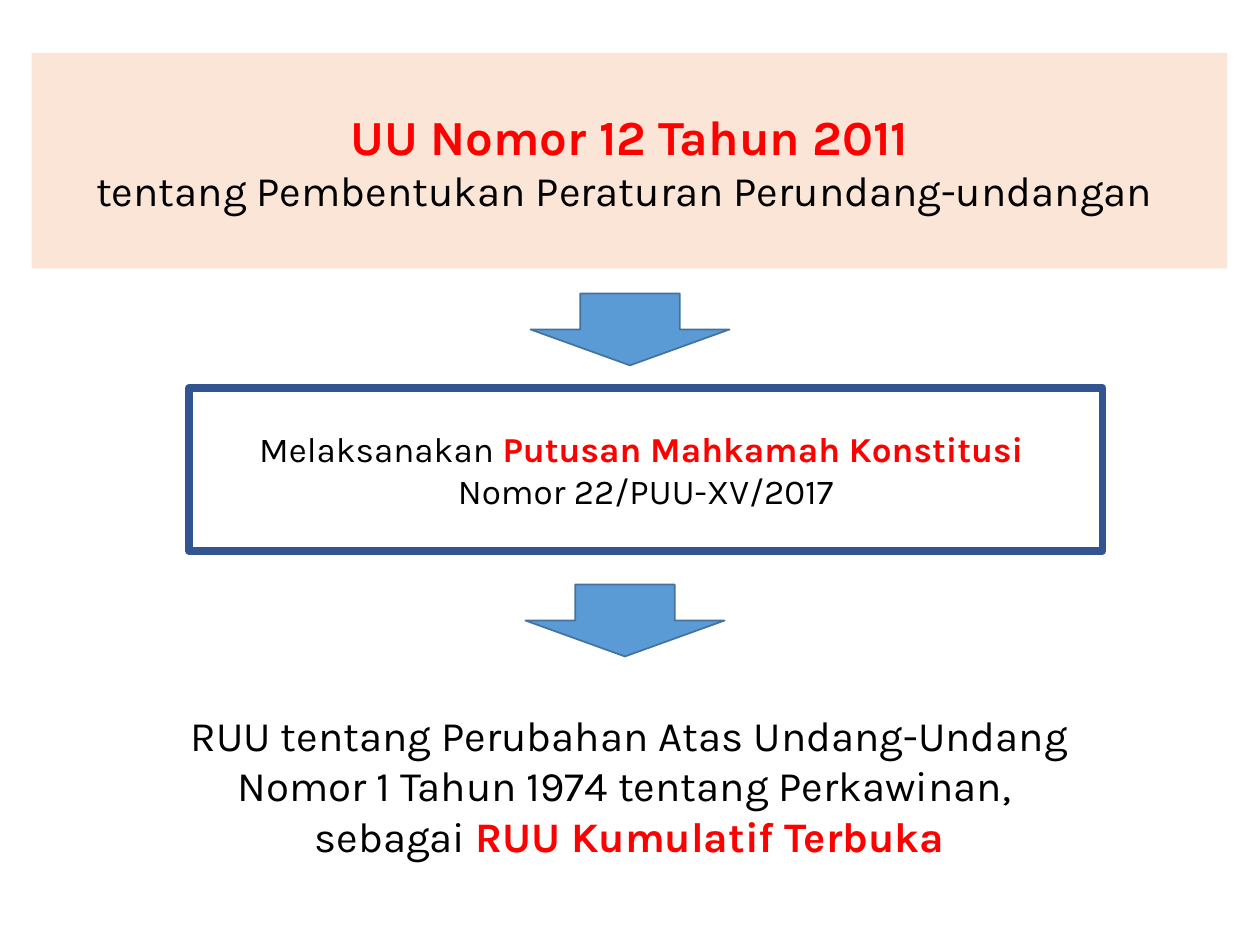
from dataclasses import dataclass

from pptx import Presentation
from pptx.dml.color import RGBColor
from pptx.enum.shapes import MSO_SHAPE
from pptx.enum.text import MSO_ANCHOR, PP_ALIGN
from pptx.util import Inches, Pt


@dataclass(frozen=True)
class Theme:
    font: str = "Karla"
    ink: str = "000000"
    accent: str = "FF0000"
    peach: str = "FBE5D6"
    white: str = "FFFFFF"
    navy: str = "325491"
    arrow: str = "5B9BD5"
    arrow_edge: str = "43739E"
    title_size: int = 28
    body_size: int = 24
    ruling_size: int = 20


THEME = Theme()


def plain(text, size):
    return text, {"size": Pt(size), "bold": False}, THEME.ink


def strong(text, size):
    return text, {"size": Pt(size), "bold": True}, THEME.accent


def write_lines(box, lines, anchor):
    frame = box.text_frame
    frame.word_wrap = True
    frame.vertical_anchor = anchor
    for index, line in enumerate(lines):
        para = frame.add_paragraph() if index else frame.paragraphs[0]
        para.alignment = PP_ALIGN.CENTER
        for text, formats, color in line:
            span = para.add_run()
            span.text = text
            for name, value in {"name": THEME.font, **formats}.items():
                setattr(span.font, name, value)
            span.font.color.rgb = RGBColor.from_string(color)


def add_block(page, kind, place, fill, edge=None, edge_width=1):
    block = page.shapes.add_shape(kind, *map(Inches, place))
    block.shadow.inherit = False
    block.fill.solid()
    block.fill.fore_color.rgb = RGBColor.from_string(fill)
    if edge:
        block.line.color.rgb = RGBColor.from_string(edge)
        block.line.width = Pt(edge_width)
    else:
        block.line.fill.background()
    return block


def add_panel(page, place, lines, fill, edge=None, edge_width=1):
    panel = add_block(page, MSO_SHAPE.RECTANGLE, place, fill, edge, edge_width)
    write_lines(panel, lines, MSO_ANCHOR.MIDDLE)


def add_down_arrow(page, left, top):
    add_block(page, MSO_SHAPE.DOWN_ARROW, (left, top, 1.58, 0.57),
              THEME.arrow, THEME.arrow_edge)


def add_text(page, place, lines):
    box = page.shapes.add_textbox(*map(Inches, place))
    write_lines(box, lines, MSO_ANCHOR.TOP)


def main():
    deck = Presentation()
    deck.slide_width, deck.slide_height = Inches(10), Inches(7.5)
    page = deck.slides.add_slide(deck.slide_layouts[6])

    add_panel(page, (0.25, 0.42, 9.49, 1.71), [
        [strong("UU Nomor 12 Tahun 2011", THEME.title_size)],
        [plain("tentang Pembentukan Peraturan Perundang-undangan ",
               THEME.body_size)],
    ], THEME.peach)
    add_panel(page, (1.5, 3.08, 7.25, 1.29), [
        [plain("Melaksanakan ", THEME.ruling_size),
         strong("Putusan Mahkamah Konstitusi ", THEME.ruling_size)],
        [plain("Nomor 22/PUU-XV/2017", THEME.ruling_size)],
    ], THEME.white, THEME.navy, 4.5)
    add_text(page, (1.08, 5.58, 7.83, 1.31), [
        [plain("RUU tentang Perubahan Atas Undang-Undang Nomor 1 Tahun 1974 "
               "tentang Perkawinan, ", THEME.body_size)],
        [plain("sebagai ", THEME.body_size),
         strong("RUU Kumulatif Terbuka", THEME.body_size)],
    ])
    for left, top in ((4.21, 2.33), (4.17, 4.64)):
        add_down_arrow(page, left, top)

    deck.save("out.pptx")


if __name__ == "__main__":
    main()
